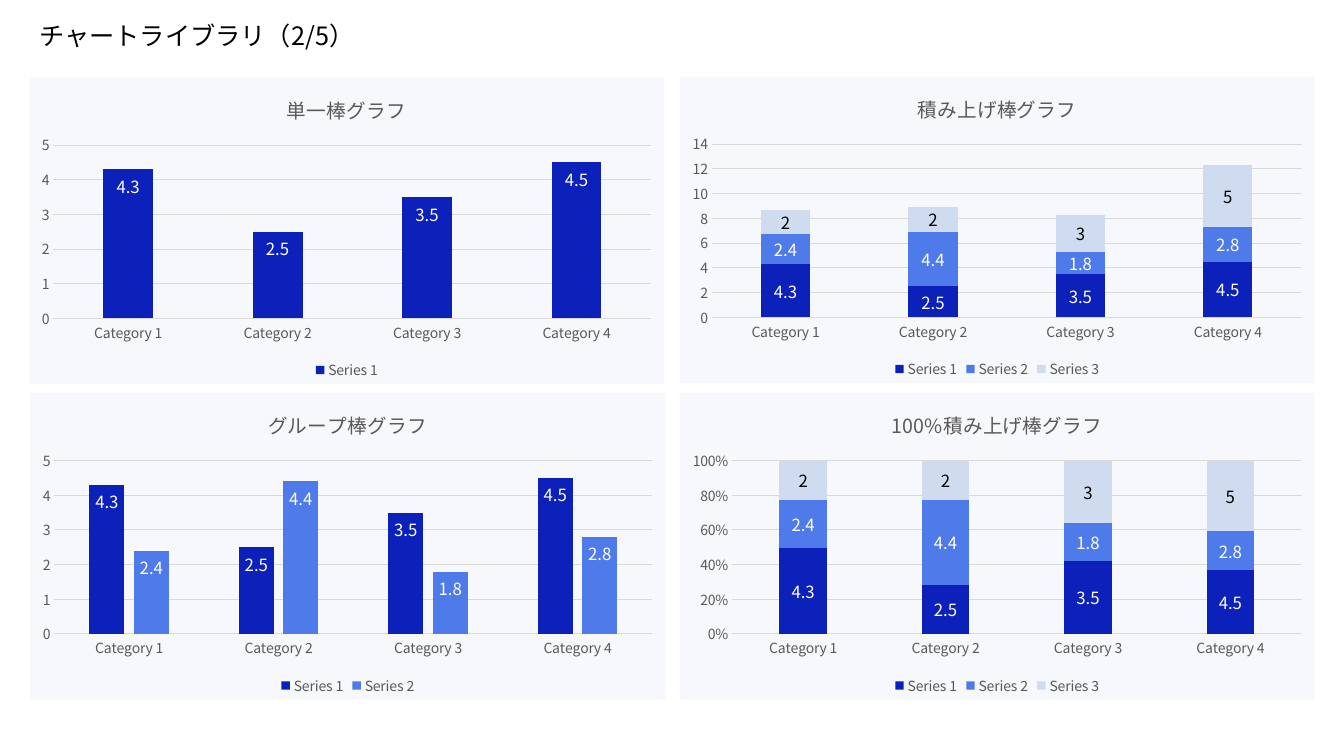
from lxml import etree
from pptx import Presentation
from pptx.chart.data import CategoryChartData
from pptx.dml.color import RGBColor
from pptx.enum import chart as ch, text
from pptx.oxml.ns import qn
from pptx.util import Inches, Pt

# Content
FONT = "Noto Sans CJK JP"
COLORS = {
    "text": "000000", "muted": "595959", "grid": "D9D9D9",
    "panel": "F7F8FB", "white": "FFFFFF",
}
HEADING = "チャートライブラリ（2/5）"
CATEGORIES = ["Category 1", "Category 2", "Category 3", "Category 4"]
SERIES = [  # name, values, fill, label colour
    ("Series 1", (4.3, 2.5, 3.5, 4.5), "0C21B9", "white"),
    ("Series 2", (2.4, 4.4, 1.8, 2.8), "4F7AE9", "white"),
    ("Series 3", (2, 2, 3, 5), "CFDCF0", "text"),
]
KIND = ch.XL_CHART_TYPE
PANELS = [  # title, chart type, series count, left, top
    ("グループ棒グラフ", KIND.COLUMN_CLUSTERED, 2, 0.3, 3.9),
    ("積み上げ棒グラフ", KIND.COLUMN_STACKED, 3, 6.74, 0.76),
    ("100%積み上げ棒グラフ", KIND.COLUMN_STACKED_100, 3, 6.74, 3.9),
    ("単一棒グラフ", KIND.COLUMN_CLUSTERED, 1, 0.29, 0.77),
]
PANEL_W, PANEL_H = 6.3, 3.04
PLOT_TOP, PLOT_BOTTOM, PLOT_RIGHT = 0.67, 2.39, 6.17
PLOT_LEFT = {KIND.COLUMN_CLUSTERED: 0.24, KIND.COLUMN_STACKED: 0.32,
             KIND.COLUMN_STACKED_100: 0.52}


def rgb(name):
    return RGBColor.from_string(COLORS.get(name, name))


def style(font, size, color):
    font.size, font.bold, font.name = Pt(size), False, FONT
    font.color.rgb = rgb(color)
    latin = font._element.find(qn("a:latin"))
    east_asian = etree.Element(qn("a:ea"), typeface=FONT)
    latin.addnext(east_asian)


def place_plot(chart, left):
    """Fix the inner plot area as fractions of the panel."""
    plot_area = chart._chartSpace.chart.plotArea
    for old in plot_area.findall(qn("c:layout")):
        plot_area.remove(old)
    layout = etree.Element(qn("c:layout"))
    manual = etree.SubElement(layout, qn("c:manualLayout"))
    settings = [
        ("layoutTarget", "inner"), ("xMode", "edge"), ("yMode", "edge"),
        ("x", left / PANEL_W), ("y", PLOT_TOP / PANEL_H),
        ("w", (PLOT_RIGHT - left) / PANEL_W),
        ("h", (PLOT_BOTTOM - PLOT_TOP) / PANEL_H),
    ]
    for tag, value in settings:
        etree.SubElement(manual, qn("c:" + tag), val=str(value))
    plot_area.insert(0, layout)


def add_panel(slide, title, kind, count, left, top):
    data = CategoryChartData()
    data.categories = CATEGORIES
    for name, values, _, _ in SERIES[:count]:
        data.add_series(name, values)
    chart = slide.shapes.add_chart(
        kind, Inches(left), Inches(top), Inches(PANEL_W), Inches(PANEL_H), data).chart
    style(chart.font, 10, "text")
    clustered = kind == KIND.COLUMN_CLUSTERED

    # Panel background
    panel = etree.Element(qn("c:spPr"))
    fill = etree.SubElement(panel, qn("a:solidFill"))
    etree.SubElement(fill, qn("a:srgbClr"), val=COLORS["panel"])
    etree.SubElement(etree.SubElement(panel, qn("a:ln")), qn("a:noFill"))
    chart._chartSpace.chart.addnext(panel)

    # Title and legend
    chart.has_title = True
    caption = chart.chart_title.text_frame.paragraphs[0].add_run()
    caption.text = title
    style(caption.font, 14, "muted")
    chart.chart_title.include_in_layout = False
    chart.has_legend = True
    chart.legend.position = ch.XL_LEGEND_POSITION.BOTTOM
    chart.legend.include_in_layout = False
    style(chart.legend.font, 10, "muted")

    # Axes
    for axis in (chart.category_axis, chart.value_axis):
        axis.major_tick_mark = axis.minor_tick_mark = ch.XL_TICK_MARK.NONE
        style(axis.tick_labels.font, 10, "muted")
    grid = chart.value_axis.major_gridlines.format.line
    for line in (chart.category_axis.format.line, grid):
        line.color.rgb = rgb("grid")
        line.width = Pt(0.75)
    chart.value_axis.format.line.fill.background()
    number_format = "0%" if kind == KIND.COLUMN_STACKED_100 else "General"
    chart.value_axis.tick_labels.number_format = number_format
    chart.value_axis.tick_labels.number_format_is_linked = False

    # Columns and their values
    plot = chart.plots[0]
    plot.vary_by_categories = False
    plot.gap_width = 200
    plot.overlap = -27 if clustered else 100
    spot = ch.XL_LABEL_POSITION
    for series, (_, _, color, label_color) in zip(plot.series, SERIES):
        series.format.fill.solid()
        series.format.fill.fore_color.rgb = rgb(color)
        series.invert_if_negative = False
        labels = series.data_labels
        labels.show_value = True
        labels.position = spot.INSIDE_END if clustered else spot.CENTER
        style(labels.font, 12, label_color)
    place_plot(chart, PLOT_LEFT[kind])


def main():
    prs = Presentation()
    prs.slide_width, prs.slide_height = Inches(13.33), Inches(7.5)
    slide = prs.slides.add_slide(prs.slide_layouts[5])
    for panel in PANELS:
        add_panel(slide, *panel)

    # Heading
    heading = slide.shapes.title
    heading.left, heading.top = Inches(0.29), Inches(0.19)
    heading.width, heading.height = Inches(3.38), Inches(0.4)
    frame = heading.text_frame
    frame.word_wrap = True
    frame.auto_size = text.MSO_AUTO_SIZE.NONE
    frame.vertical_anchor = text.MSO_ANCHOR.TOP
    line = frame.paragraphs[0]
    line.alignment = text.PP_ALIGN.LEFT
    line.line_spacing = 0.9
    run = line.add_run()
    run.text = HEADING
    style(run.font, 18, "text")
    prs.save("out.pptx")


if __name__ == "__main__":
    main()
